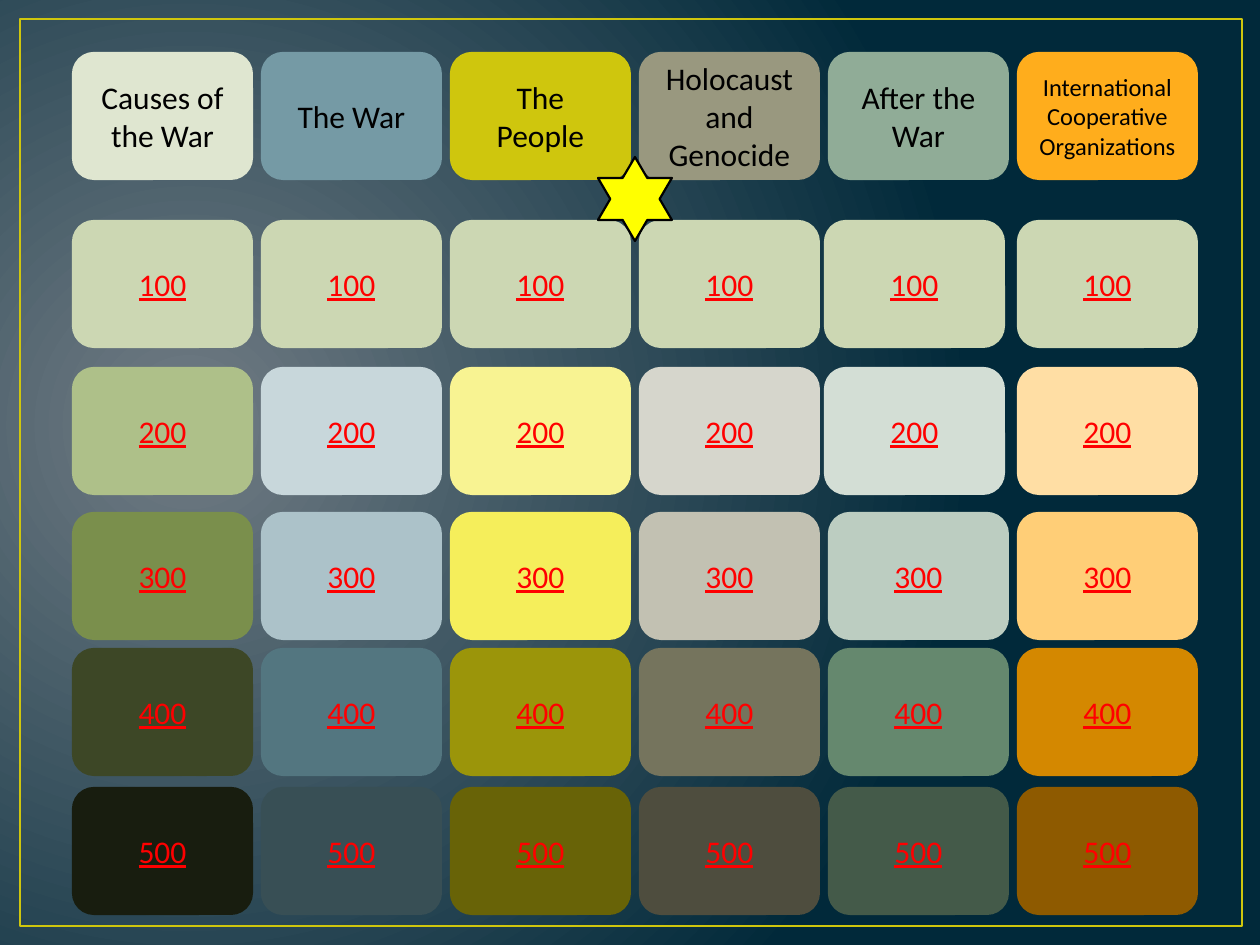
"""Build a quiz board slide with six categories and five point values each."""
from dataclasses import dataclass

from lxml import etree
from pptx import Presentation
from pptx import util as u
from pptx.dml.color import RGBColor
from pptx.enum import shapes, text
from pptx.oxml.ns import qn

PX = 914400 // 126
SLIDE_WIDTH, SLIDE_HEIGHT = 1260, 945
BOARD_LEFT, COLUMN_STEP = 73, 189
TILE_WIDTH, TILE_HEIGHT = 179, 126
HEADING_TOP = 53
VALUE_TOPS = {100: 221, 200: 368, 300: 513, 400: 649, 500: 788}
NUDGES = {("After the War", 100): -4, ("After the War", 200): -4}

GLOW = RGBColor(0x71, 0x7C, 0x84)
NIGHT = RGBColor(0x01, 0x29, 0x3A)
GOLD = RGBColor(0xCF, 0xC6, 0x0D)
YELLOW = RGBColor(0xFF, 0xFF, 0x00)
RED = RGBColor(0xFF, 0x00, 0x00)
BLACK = RGBColor(0x00, 0x00, 0x00)
PALE_GREEN = RGBColor(0xCC, 0xD7, 0xB3)


@dataclass(frozen=True)
class Category:
    name: str
    color: RGBColor
    shades: tuple[RGBColor, ...]
    size: int = 18


@dataclass(frozen=True)
class Tile:
    left: int
    top: int
    label: str
    color: RGBColor
    font_color: RGBColor
    size: int = 18
    underline: bool = False


def palette(codes: str) -> tuple[RGBColor, ...]:
    return tuple(RGBColor.from_string(code) for code in codes.split())


CATEGORIES = (
    Category("Causes of the War", RGBColor(0xDF, 0xE6, 0xD0),
             palette("AEC089 7A8F4C 3D4726 181D0F")),
    Category("The War", RGBColor(0x75, 0x9A, 0xA5),
             palette("C8D7DB ACC2C9 537680 384F55")),
    Category("The People", GOLD,
             palette("F8F392 F5EE5B 9B950A 686307")),
    Category("Holocaust and Genocide", RGBColor(0x99, 0x98, 0x7F),
             palette("D6D6CC C2C1B2 75745D 4E4D3E")),
    Category("After the War", RGBColor(0x90, 0xAC, 0x97),
             palette("D3DED5 BCCDC1 65886E 445A49")),
    Category("International Cooperative Organizations", RGBColor(0xFF, 0xAD, 0x1C),
             palette("FFDEA4 FFCE77 D48800 8E5A00"), size=14),
)


def paint_background(slide) -> None:
    fill = slide.background.fill
    fill.gradient()
    for stop, color, position in zip(fill.gradient_stops, (GLOW, NIGHT), (0, 1)):
        stop.color.rgb = color
        stop.position = position
    gradient = slide.element.find(f".//{qn('p:bgPr')}/{qn('a:gradFill')}")
    linear = gradient.find(qn("a:lin"))
    radial = etree.Element(qn("a:path"), {"path": "circle"})
    etree.SubElement(radial, qn("a:fillToRect"),
                     {"l": "15000", "t": "50000", "r": "85000", "b": "60000"})
    gradient.replace(linear, radial)


def add_outline(slide, kind: shapes.MSO_SHAPE, box: tuple[int, int, int, int],
                fill: RGBColor | None, line: RGBColor, width: float = 1.25):
    outline = slide.shapes.add_shape(kind, *(side * PX for side in box))
    outline.shadow.inherit = False
    if fill is None:
        outline.fill.background()
    else:
        outline.fill.solid()
        outline.fill.fore_color.rgb = fill
    outline.line.color.rgb = line
    outline.line.width = u.Pt(width)
    return outline


def add_tile(slide, tile: Tile) -> None:
    box = (tile.left, tile.top, TILE_WIDTH, TILE_HEIGHT)
    card = add_outline(slide, shapes.MSO_SHAPE.ROUNDED_RECTANGLE, box,
                       tile.color, tile.color)
    frame = card.text_frame
    frame.text = tile.label
    frame.word_wrap = True
    frame.vertical_anchor = text.MSO_ANCHOR.MIDDLE
    label = frame.paragraphs[0]
    label.alignment = text.PP_ALIGN.CENTER
    font = label.runs[0].font
    font.name = "Calibri"
    font.size = u.Pt(tile.size)
    font.color.rgb = tile.font_color
    if tile.underline:
        font.underline = True


def add_category(slide, category: Category, left: int) -> None:
    add_tile(slide, Tile(left, HEADING_TOP, category.name, category.color,
                         BLACK, category.size))
    colors = (PALE_GREEN, *category.shades)
    for (value, top), color in zip(VALUE_TOPS.items(), colors):
        nudge = NUDGES.get((category.name, value), 0)
        add_tile(slide, Tile(left + nudge, top, str(value), color, RED,
                             underline=True))


def main() -> None:
    deck = Presentation()
    deck.slide_width, deck.slide_height = SLIDE_WIDTH * PX, SLIDE_HEIGHT * PX
    board = deck.slides.add_slide(deck.slide_layouts[6])
    paint_background(board)
    add_outline(board, shapes.MSO_SHAPE.RECTANGLE, (20, 19, 1222, 907),
                None, GOLD, 1.5)
    for column, category in enumerate(CATEGORIES):
        add_category(board, category, BOARD_LEFT + column * COLUMN_STEP)
    add_outline(board, shapes.MSO_SHAPE.STAR_6_POINT, (598, 157, 74, 84),
                YELLOW, BLACK)
    deck.save("out.pptx")


if __name__ == "__main__":
    main()
